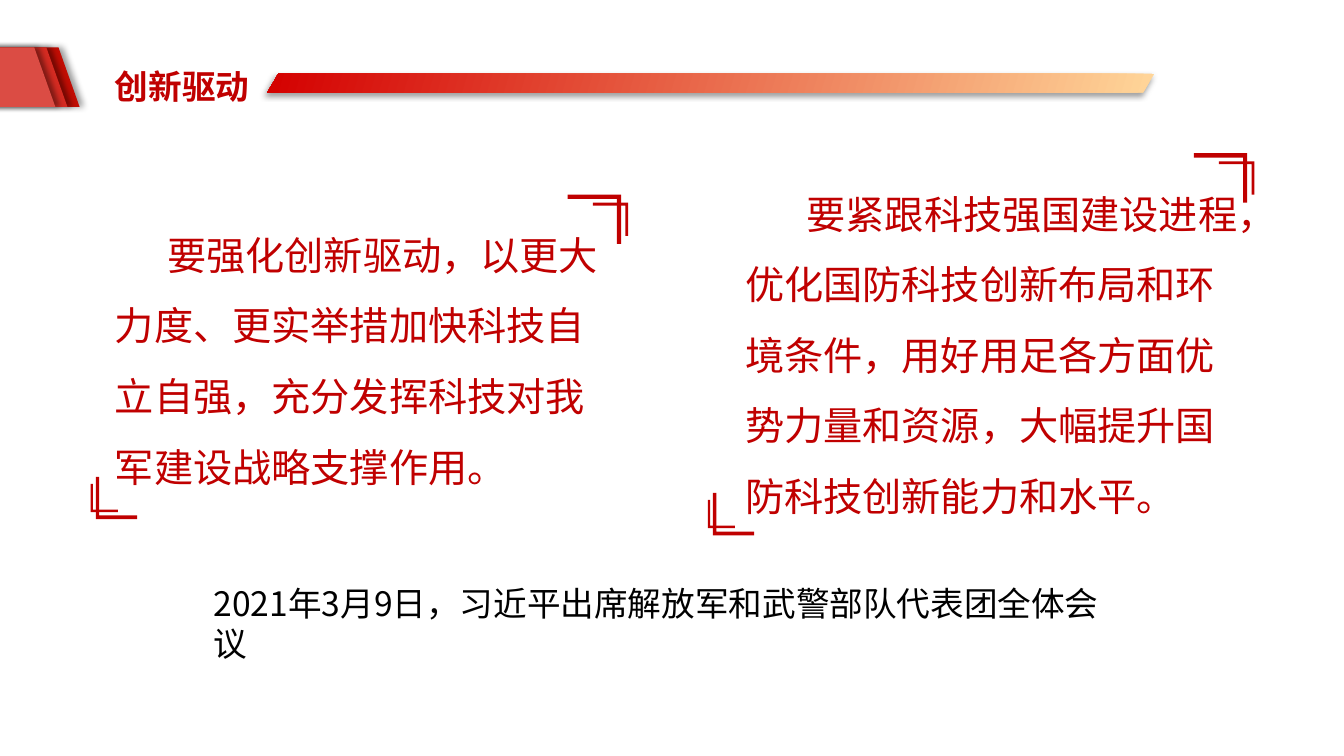
import dataclasses

import lxml.etree
import pptx
import pptx.dml.color
import pptx.enum.shapes
import pptx.enum.text
import pptx.oxml.ns
import pptx.shapes.autoshape
import pptx.slide
import pptx.util

Inches = pptx.util.Inches
Pt = pptx.util.Pt
qn = pptx.oxml.ns.qn
Shape = pptx.enum.shapes.MSO_SHAPE

FONT = "Noto Sans CJK SC"
RED = "C00000"


@dataclasses.dataclass
class Frame:
    left: float
    top: float
    width: float
    height: float


@dataclasses.dataclass
class Quote:
    words: str
    frame: Frame
    indent: float
    lower_corner: tuple[float, float]
    upper_corner: tuple[float, float]


@dataclasses.dataclass
class Bracket:
    size: tuple[float, float]
    small_size: tuple[float, float]
    small_offset: tuple[float, float]
    rotation: int


LOWER = Bracket((0.41, 0.42), (0.27, 0.28), (-0.05, 0.07), 0)
UPPER = Bracket((0.53, 0.49), (0.35, 0.33), (0.25, 0.08), 180)

QUOTES = [
    Quote("要强化创新驱动，以更大力度、更实举措加快科技自立自强，充分发挥科技对我军建设战略支撑作用。",
          Frame(1.04, 2.01, 5.12, 2.93), 0.52, (0.95, 4.73), (5.63, 1.93)),
    Quote("要紧跟科技强国建设进程，优化国防科技创新布局和环境条件，用好用足各方面优势力量和资源，大幅提升国防科技创新能力和水平。",
          Frame(7.29, 1.6, 5.15, 3.63), 0.61, (7.07, 4.89), (11.84, 1.52)),
]


def colour(value: str) -> pptx.dml.color.RGBColor:
    return pptx.dml.color.RGBColor.from_string(value)


def place(box: pptx.shapes.autoshape.Shape, frame: Frame) -> None:
    box.left, box.top = Inches(frame.left), Inches(frame.top)
    box.width, box.height = Inches(frame.width), Inches(frame.height)


def add_figure(page: pptx.slide.Slide, kind: Shape, frame: Frame, fill: str,
               adjustments: list[float]) -> pptx.shapes.autoshape.Shape:
    figure = page.shapes.add_shape(kind, Inches(frame.left), Inches(frame.top),
                                   Inches(frame.width), Inches(frame.height))
    for index, adjustment in enumerate(adjustments):
        figure.adjustments[index] = adjustment
    figure.fill.solid()
    figure.fill.fore_color.rgb = colour(fill)
    figure.line.fill.background()
    figure.shadow.inherit = False
    return figure


def add_shadow(figure: pptx.shapes.autoshape.Shape, blur: int, direction: int) -> None:
    effects = figure.element.spPr.find(qn("a:effectLst"))
    shadow = lxml.etree.SubElement(
        effects, qn("a:outerShdw"), blurRad=str(Pt(blur)), dist=str(Pt(3)),
        dir=str(direction * 60000), algn="ctr", rotWithShape="0")
    tint = lxml.etree.SubElement(shadow, qn("a:srgbClr"), val="000000")
    lxml.etree.SubElement(tint, qn("a:alpha"), val="40000")


def write(box: pptx.shapes.autoshape.Shape, words: str, size: int, tint: str,
          bold: bool = False, spacing: float = 1.0, indent: float = 0) -> None:
    text = box.text_frame
    text.word_wrap = True
    text.auto_size = pptx.enum.text.MSO_AUTO_SIZE.NONE
    text.vertical_anchor = pptx.enum.text.MSO_ANCHOR.TOP
    para = text.paragraphs[0]
    properties = para._p.get_or_add_pPr()
    properties.set("marL", "0")
    properties.set("indent", str(Inches(indent)))
    lxml.etree.SubElement(properties, qn("a:buNone"))
    para.alignment = pptx.enum.text.PP_ALIGN.LEFT
    para.line_spacing = spacing
    para.space_before = Pt(0)
    span = para.add_run()
    span.text = words
    span.font.name = FONT
    span.font.size = Pt(size)
    span.font.bold = bold
    span.font.color.rgb = colour(tint)
    latin = span.font._element.find(qn("a:latin"))
    latin.addnext(latin.makeelement(qn("a:ea"), {"typeface": FONT}))


def add_bracket(page: pptx.slide.Slide, corner: tuple[float, float], bracket: Bracket) -> None:
    small_corner = (corner[0] + bracket.small_offset[0], corner[1] + bracket.small_offset[1])
    for position, size in ((corner, bracket.size), (small_corner, bracket.small_size)):
        figure = add_figure(page, Shape.HALF_FRAME, Frame(*position, *size), RED, [0.088, 0.084])
        figure.element.spPr.find(qn("a:prstGeom")).set("prst", "corner")
        figure.rotation = bracket.rotation


def add_header(page: pptx.slide.Slide) -> None:
    for index, (fill, blur) in enumerate((("C10D04", 5), ("D42B22", 4), ("DB4C44", 4))):
        frame = Frame(-0.55 - 0.12 * index, 0.47, 1.34, 0.59)
        tab = add_figure(page, Shape.PARALLELOGRAM, frame, fill, [0.355])
        tab.element.spPr.find(qn("a:xfrm")).set("flipH", "1")
        add_shadow(tab, blur, 0)

    place(page.shapes.title, Frame(1.04, 0.4, 1.87, 0.71))
    write(page.shapes.title, "创新驱动", 24, RED, bold=True, spacing=1.5)

    band = add_figure(page, Shape.PARALLELOGRAM, Frame(2.65, 0.73, 8.8, 0.19), "D40000", [0.589])
    band.fill.gradient()
    band.fill.gradient_angle = 163
    for stop, tint in zip(band.fill.gradient_stops, ("FFD699", "D40000")):
        stop.color.rgb = colour(tint)
    add_shadow(band, 4, 135)


def main() -> None:
    deck = pptx.Presentation()
    deck.slide_width, deck.slide_height = Inches(13.33), Inches(7.5)
    page = deck.slides.add_slide(deck.slide_layouts.get_by_name("Two Content"))
    add_header(page)

    for index, quote in enumerate(QUOTES, start=1):
        add_bracket(page, quote.lower_corner, LOWER)
        add_bracket(page, quote.upper_corner, UPPER)
        body = page.placeholders[index]
        place(body, quote.frame)
        write(body, quote.words, 28, RED, spacing=1.5, indent=quote.indent)

    caption = page.shapes.add_textbox(Inches(2.02), Inches(5.73), Inches(9.3), Inches(0.5))
    write(caption, "2021年3月9日，习近平出席解放军和武警部队代表团全体会议", 24, "000000")
    deck.save("out.pptx")


if __name__ == "__main__":
    main()
